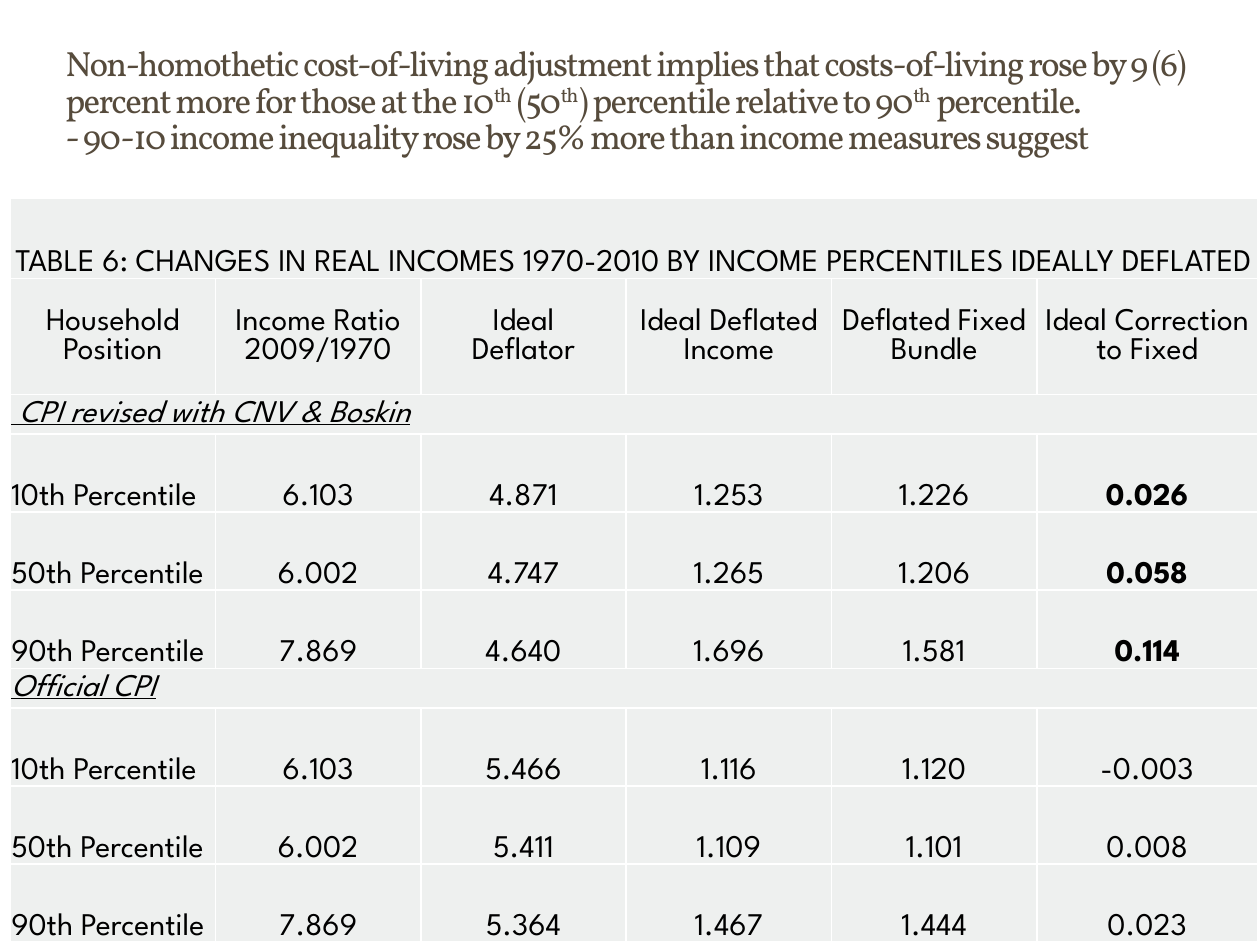
from lxml.etree import SubElement
from pptx import Presentation
from pptx.dml.color import RGBColor
from pptx.enum.shapes import MSO_SHAPE
from pptx.enum.text import MSO_ANCHOR, PP_ALIGN
from pptx.oxml.ns import qn
from pptx.util import Inches, Pt

HUES = {"white": "FFFFFF", "pale": "EEF0EF", "black": "000000", "brown": "564B3C"}
HEADS = ["Household Position", "Income Ratio 2009/1970", "Ideal\nDeflator",
         "Ideal Deflated Income", "Deflated Fixed Bundle", "Ideal Correction to Fixed"]
GROUPS = [
    (" CPI revised with CNV & Boskin", True, [
        "6.103 4.871 1.253 1.226 0.026",
        "6.002 4.747 1.265 1.206 0.058",
        "7.869 4.640 1.696 1.581 0.114"]),
    ("Official CPI", False, [
        "6.103 5.466 1.116 1.120 -0.003",
        "6.002 5.411 1.109 1.101 0.008",
        "7.869 5.364 1.467 1.444 0.023"]),
]
RANKS = ["10th Percentile", "50th Percentile", "90th Percentile"]
CLAIMS = [
    "Non-homothetic cost-of-living adjustment implies that costs-of-living rose by 9 (6) "
    "percent more for those at the 10^th^ (50^th^) percentile relative to 90^th^ percentile.",
    "- 90-10 income inequality rose by 25% more than income measures suggest",
]


def hue(name):
    return RGBColor.from_string(HUES[name])


def write(para, text, face="League Spartan", size=18, tint="black", align=PP_ALIGN.LEFT,
          bold=False, slant=False, track=0):
    para.alignment = align
    for row, line in enumerate(text.split("\n")):
        if row:
            para.add_line_break()
        for part, words in enumerate(line.split("^")):
            run = para.add_run()
            run.text = words
            font = run.font
            font.name, font.size, font.bold = face, Pt(size), bold
            font.italic = font.underline = slant
            font.color.rgb = hue(tint)
            props = run._r.get_or_add_rPr()
            if track:
                props.set("spc", str(track * 100))
            if part % 2:
                props.set("baseline", "30000")


class Deck:
    cols, rows = 100, 75

    def __init__(self):
        self.show = Presentation()
        self.show.slide_width, self.show.slide_height = Inches(10), Inches(7.5)
        self.slide = self.show.slides.add_slide(self.show.slide_layouts[6])

    def wide(self, cols):
        return int(self.show.slide_width * cols / self.cols)

    def high(self, rows):
        return int(self.show.slide_height * rows / self.rows)

    def place(self, left, top, width, height):
        return self.wide(left), self.high(top), self.wide(width), self.high(height)

    def panel(self, *spot):
        shape = self.slide.shapes.add_shape(MSO_SHAPE.ROUNDED_RECTANGLE, *self.place(*spot))
        shape.adjustments[0] = 0.02
        shape.shadow.inherit = False
        shape.fill.solid()
        shape.fill.fore_color.rgb = hue("white")
        shape.line.fill.background()

    def text(self, lines, *spot, **style):
        frame = self.slide.shapes.add_textbox(*self.place(*spot)).text_frame
        frame.word_wrap = True
        frame.vertical_anchor = MSO_ANCHOR.MIDDLE
        for row, line in enumerate(lines):
            para = frame.add_paragraph() if row else frame.paragraphs[0]
            para.line_spacing = 0.87
            write(para, line, **style)

    def table(self, widths, heights, *spot):
        frame = self.slide.shapes.add_table(len(heights), len(widths), *self.place(*spot))
        grid = frame.table
        grid.first_row = grid.horz_banding = False
        for col, width in zip(grid.columns, widths):
            col.width = self.wide(width)
        for row, height in zip(grid.rows, heights):
            row.height = self.high(height)
        for cell in grid.iter_cells():
            self.frame(cell)
        return grid

    def frame(self, cell):
        cell.margin_left = cell.margin_right = cell.margin_top = Inches(0.01)
        cell.margin_bottom = 0
        props = cell._tc.get_or_add_tcPr()
        for side in ("a:lnL", "a:lnR", "a:lnT", "a:lnB"):
            line = SubElement(props, qn(side), w=str(Pt(1)))
            fill = SubElement(line, qn("a:solidFill"))
            SubElement(fill, qn("a:srgbClr"), val=HUES["white"])
        cell.fill.solid()
        cell.fill.fore_color.rgb = hue("pale")

    def cell(self, grid, row, col, text, anchor=MSO_ANCHOR.BOTTOM, span=1, **style):
        cell = grid.cell(row, col)
        if span > 1:
            cell.merge(grid.cell(row, col + span - 1))
        cell.vertical_anchor = anchor
        write(cell.text_frame.paragraphs[0], text, **style)


def main():
    deck = Deck()
    deck.panel(1, 1.1, 98, 72.9)
    block = [3.15] + [6.2] * 3
    grid = deck.table([16.3] * 5 + [17.5], [6.4, 9.2] + block * 2, 0.8, 15.7, 99, 59.1)
    mid, center = MSO_ANCHOR.MIDDLE, PP_ALIGN.CENTER
    deck.cell(grid, 0, 0, "TABLE 6: CHANGES IN REAL INCOMES 1970-2010 BY INCOME PERCENTILES "
              "IDEALLY DEFLATED", span=6, align=center)
    for col, head in enumerate(HEADS):
        deck.cell(grid, 1, col, head, mid, align=center)
    for part, (title, strong, lines) in enumerate(GROUPS):
        top = 2 + part * len(block)
        deck.cell(grid, top, 0, title, mid, span=6, slant=True)
        for row, (rank, line) in enumerate(zip(RANKS, lines), top + 1):
            deck.cell(grid, row, 0, rank)
            for col, value in enumerate(line.split(), 1):
                deck.cell(grid, row, col, value, align=center, bold=strong and col == 5)
    deck.text(CLAIMS, 4.2, 1.7, 93.3, 12.8, face="Vollkorn", size=20, tint="brown", track=-1)
    deck.show.save("out.pptx")


if __name__ == "__main__":
    main()
